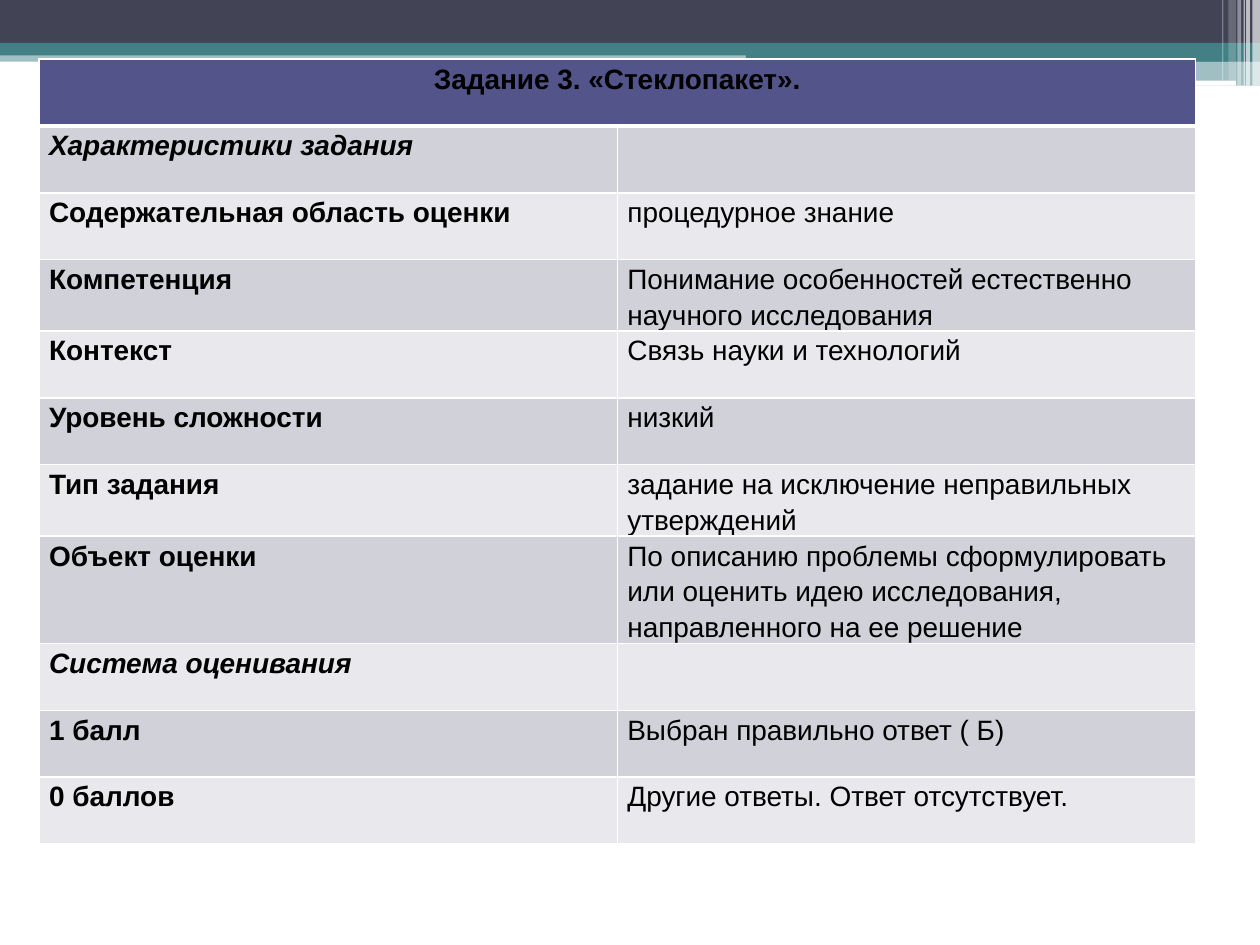
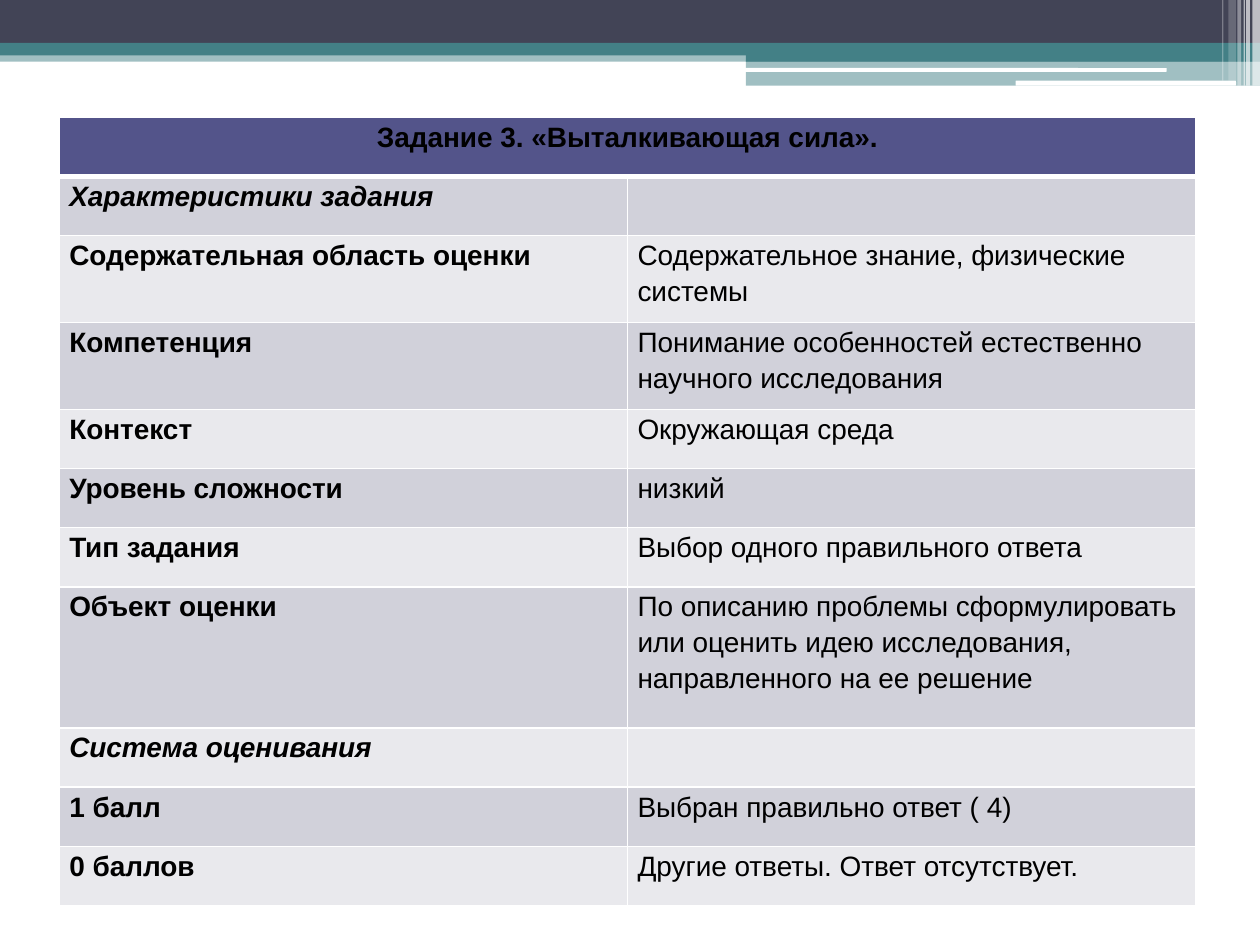
"""Builds two task description slides, each a banded table under a striped header."""
from collections import namedtuple
from lxml.etree import SubElement
from pptx import Presentation
from pptx.dml.color import RGBColor as Rgb
from pptx.enum.shapes import MSO_SHAPE as Preset
from pptx.enum.text import PP_ALIGN as Align
from pptx.oxml.ns import qn
from pptx.util import Inches, Pt

Theme = namedtuple("Theme", "dark teal white heading bands ink font size line heavy_line")
theme = Theme(dark="424456", teal="438086", white="FFFFFF", heading="53548A",
              bands=("E9E9ED", "D1D1DA"), ink="000000", font="Arial", size=16,
              line=1, heavy_line=3)

RECT, ROUND = Preset.RECTANGLE, Preset.ROUNDED_RECTANGLE
header_shapes = [
    (RECT, 0, 0.4, 10, 0.09, theme.teal, 50),
    (RECT, 0, 0, 10, 0.34, theme.dark, 100),
    (RECT, 0, 0.34, 10, 0.1, theme.teal, 100),
    (RECT, 5.92, 0.39, 4.08, 0.1, theme.teal, 100),
    (RECT, 5.92, 0.48, 4.08, 0.2, theme.teal, 50),
    (ROUND, 5.91, 0.54, 3.35, 0.03, theme.white, 100),
    (ROUND, 8.06, 0.64, 1.75, 0.04, theme.white, 100),
    (RECT, 9.94, 0, 0.06, 0.68, theme.white, 65),
    (RECT, 9.89, 0, 0.03, 0.68, theme.white, 65),
    (RECT, 9.87, 0, 0.01, 0.68, theme.white, 60),
    (RECT, 9.82, 0, 0.03, 0.68, theme.white, 40),
    (RECT, 9.75, 0, 0.06, 0.64, theme.white, 20),
    (RECT, 9.7, 0, 0.01, 0.64, theme.white, 30),
]

labels = ["Характеристики задания", "Содержательная область оценки", "Компетенция",
          "Контекст", "Уровень сложности", "Тип задания", "Объект оценки",
          "Система оценивания", "1 балл", "0 баллов"]
sections = {"Характеристики задания", "Система оценивания"}
competence = "Понимание особенностей естественно научного исследования"
level = "низкий"
goal = ("По описанию проблемы сформулировать или оценить идею исследования, "
        "направленного на ее решение")
no_score = "Другие ответы. Ответ отсутствует."

Task = namedtuple("Task", "title left top column_width row_height tall_rows values")
tasks = [
    Task("Задание 3. «Стеклопакет».", 0.31, 0.47, 4.59, 0.53, {},
         ["", "процедурное знание", competence, "Связь науки и технологий", level,
          "задание на исключение неправильных утверждений", goal, "",
          "Выбран правильно ответ ( Б)", no_score]),
    Task("Задание 3. «Выталкивающая сила».", 0.47, 0.93, 4.51, 0.47,
         {2: 0.69, 3: 0.69, 7: 1.12},
         ["", "Содержательное знание, физические системы", competence,
          "Окружающая среда", level, "Выбор одного правильного ответа", goal, "",
          "Выбран правильно ответ ( 4)", no_score]),
]


def format_cell(cell, color, top, bottom):
    cell.margin_left = cell.margin_right = Inches(0.08)
    cell.margin_top = cell.margin_bottom = 0
    properties = cell._tc.get_or_add_tcPr()
    for side, width in (("L", theme.line), ("R", theme.line), ("T", top), ("B", bottom)):
        border = SubElement(properties, qn(f"a:ln{side}"), w=str(Pt(width)))
        SubElement(SubElement(border, qn("a:solidFill")), qn("a:srgbClr"), val=theme.white)
    cell.fill.solid()
    cell.fill.fore_color.rgb = Rgb.from_string(color)


def write_cell(cell, text, bold=False, italic=False, align=Align.LEFT):
    para = cell.text_frame.paragraphs[0]
    para.alignment = align
    para.line_spacing = 1.15
    para.space_after = Pt(7.5)
    if not text:
        para.font.size = Pt(theme.size)
        return
    span = para.add_run()
    span.text = text
    span.font.name = theme.font
    span.font.size = Pt(theme.size)
    span.font.bold = bold
    span.font.italic = italic
    span.font.color.rgb = Rgb.from_string(theme.ink)


deck = Presentation()
deck.slide_width = Inches(10)
deck.slide_height = Inches(7.5)

for task in tasks:
    page = deck.slides.add_slide(deck.slide_layouts[6])

    for preset, left, top, width, height, color, opacity in header_shapes:
        box = page.shapes.add_shape(preset, Inches(left), Inches(top),
                                    Inches(width), Inches(height))
        box.shadow.inherit = False
        box.line.fill.background()
        box.fill.solid()
        box.fill.fore_color.rgb = Rgb.from_string(color)
        if opacity < 100:
            tint = box._element.spPr.find(f"{qn('a:solidFill')}/{qn('a:srgbClr')}")
            SubElement(tint, qn("a:alpha"), val=str(opacity * 1000))

    heights = [task.tall_rows.get(index, task.row_height) for index in range(len(labels) + 1)]
    table = page.shapes.add_table(len(heights), 2, Inches(task.left), Inches(task.top),
                                  Inches(2 * task.column_width), Inches(sum(heights))).table
    table.first_row = table.horz_banding = False
    for column in table.columns:
        column.width = Inches(task.column_width)

    for index, height in enumerate(heights):
        table.rows[index].height = Inches(height)
        color = theme.bands[index % 2] if index else theme.heading
        top = theme.heavy_line if index == 1 else theme.line
        bottom = theme.heavy_line if index == 0 else theme.line
        for cell in table.rows[index].cells:
            format_cell(cell, color, top, bottom)

    heading = table.cell(0, 0)
    heading.merge(table.cell(0, 1))
    write_cell(heading, task.title, bold=True, align=Align.CENTER)
    for index, (label, value) in enumerate(zip(labels, task.values), start=1):
        write_cell(table.cell(index, 0), label, bold=True, italic=label in sections)
        write_cell(table.cell(index, 1), value)

deck.save("out.pptx")
